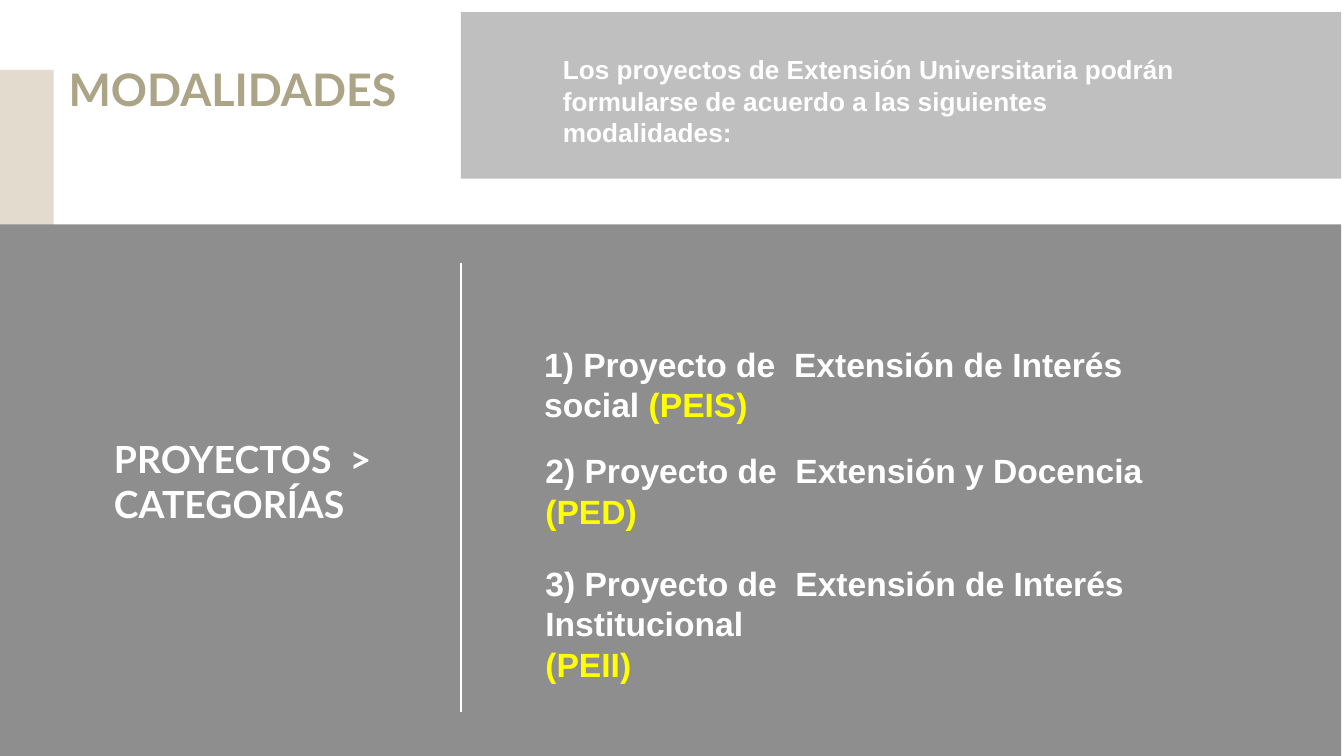
"""Builds the slide on the modalities of university extension projects."""
from lxml.etree import SubElement
from pptx import Presentation
from pptx.dml.color import RGBColor
from pptx.enum.shapes import MSO_CONNECTOR, MSO_SHAPE
from pptx.enum.text import MSO_ANCHOR, MSO_AUTO_SIZE, PP_ALIGN
from pptx.oxml.ns import qn
from pptx.util import Inches, Pt


def paint(target, color):
    target.rgb = RGBColor.from_string(color)


def write(shape, box, paras, font, size, pad=0.1, anchor=MSO_ANCHOR.TOP, align=PP_ALIGN.LEFT):
    shape.left, shape.top, shape.width, shape.height = map(Inches, box)
    frame = shape.text_frame
    frame.word_wrap = True
    frame.auto_size = MSO_AUTO_SIZE.NONE
    frame.vertical_anchor = anchor
    frame.margin_left = frame.margin_right = Inches(0.1)
    frame.margin_top = frame.margin_bottom = Inches(pad)
    for i, runs in enumerate(paras):
        para = frame.add_paragraph() if i else frame.paragraphs[0]
        para.alignment = align
        for text, color in runs:
            run = para.add_run()
            run.text = text
            run.font.name = font
            run.font.size = Pt(size)
            run.font.bold = True
            paint(run.font.color, color)


WHITE, YELLOW = "FFFFFF", "FFFF00"

prs = Presentation()
prs.slide_width = Inches(10)
prs.slide_height = Inches(10 * 9 / 16)
slide = prs.slides.add_slide(prs.slide_layouts[5])
shapes = slide.shapes

write(shapes.title, (-0.73, 0.17, 3.78, 0.98), [[("MODALIDADES", "ABA487")]],
      "Lato", 24, anchor=MSO_ANCHOR.MIDDLE, align=PP_ALIGN.RIGHT)

panels = [
    ((0, 0.52, 0.4, 2.17), "CFC3AC", 58),
    ((3.43, 0.09, 6.55, 1.24), "BFBFBF", 100),
    ((-0.02, 1.67, 10, 3.96), "8E8E8E", 100),
]
for box, color, alpha in panels:
    panel = shapes.add_shape(MSO_SHAPE.RECTANGLE, *map(Inches, box))
    panel.shadow.inherit = False
    panel.line.fill.background()
    panel.fill.solid()
    paint(panel.fill.fore_color, color)
    if alpha < 100:
        tint = panel._element.spPr.find(".//" + qn("a:srgbClr"))
        SubElement(tint, qn("a:alpha"), val=str(alpha * 1000))

intro = "Los proyectos de Extensión Universitaria podrán formularse de acuerdo a las siguientes modalidades:"
label = "PROYECTOS  > CATEGORÍAS"
texts = [
    ((4.09, 0.3, 4.92, 1.03), [[(intro, WHITE)]], "Arial", 14, 0.1, MSO_ANCHOR.TOP),
    ((0.75, 3.3, 3.14, 0.71), [[(label, WHITE)]], "Lato", 20, 0.1, MSO_ANCHOR.BOTTOM),
    ((3.95, 2.51, 5.21, 0.71),
     [[("1) Proyecto de  Extensión de Interés social ", WHITE), ("(PEIS)", YELLOW)]],
     "Arial", 18, 0.05, MSO_ANCHOR.TOP),
    ((3.96, 3.3, 5.21, 0.71),
     [[("2) Proyecto de  Extensión y Docencia", WHITE)], [("(PED)", YELLOW)]],
     "Arial", 18, 0.05, MSO_ANCHOR.TOP),
    ((3.96, 4.14, 5.21, 1.01),
     [[("3) Proyecto de  Extensión de Interés Institucional", WHITE)], [("(PEII)", YELLOW)]],
     "Arial", 18, 0.05, MSO_ANCHOR.TOP),
]
for box, paras, font, size, pad, anchor in texts:
    write(shapes.add_textbox(0, 0, 0, 0), box, paras, font, size, pad, anchor)

rule = shapes.add_connector(MSO_CONNECTOR.STRAIGHT, *map(Inches, (3.43, 1.96, 3.43, 5.3)))
rule.line.width = Pt(0.75)
paint(rule.line.color, WHITE)
SubElement(rule._element.spPr, qn("a:effectLst"))

prs.save("out.pptx")
